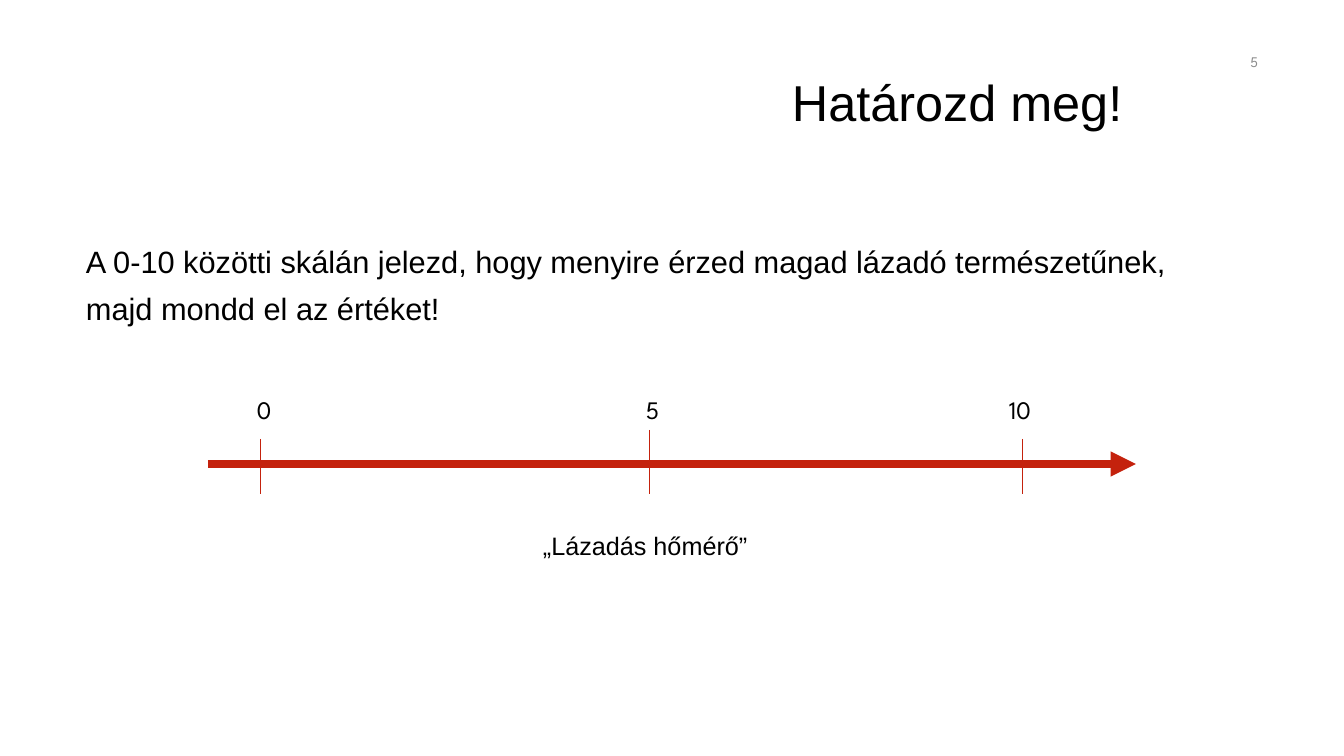
from dataclasses import dataclass

from lxml.etree import SubElement
from pptx import Presentation
from pptx.dml.color import RGBColor
from pptx.enum.shapes import MSO_CONNECTOR
from pptx.enum.text import MSO_ANCHOR, MSO_AUTO_SIZE, PP_ALIGN
from pptx.oxml.ns import qn
from pptx.util import Pt

# Content
TITLE = "Határozd meg!"
INSTRUCTIONS = [
    "A 0-10 közötti skálán jelezd, hogy menyire érzed magad lázadó természetűnek,",
    "majd mondd el az értéket!",
]
PAGE_NUMBER = "5"
CAPTION = "„Lázadás hőmérő”"
# Label, tick x, tick top, label width
TICKS = [("0", 261, 439, 29), ("5", 650, 430, 29), ("10", 1023, 439, 48)]


@dataclass(frozen=True)
class Theme:
    text: str = "000000"
    muted: str = "8C8C8C"
    accent: str = "C4220D"
    body_font: str = "Arial"
    number_font: str = "League Spartan"
    title_size: float = 36
    body_size: float = 22
    label_size: float = 18
    page_size: float = 10.5
    axis_width: float = 6
    tick_width: float = 0.75


THEME = Theme()
SLIDE_WIDTH, SLIDE_HEIGHT = 1344, 756
AXIS_LEFT, AXIS_RIGHT, AXIS_Y = 208, 1136, 464
TICK_BOTTOM = 494
LABEL_TOP, LABEL_HEIGHT = 389, 40


def px(length):
    return round(length * 914400 / 100.8)


def add_text(slide, lines, left, top, width, height, *, size, font=THEME.body_font,
             color=THEME.text, align=None, anchor=MSO_ANCHOR.TOP, wrap=True,
             grow=False, line_spacing=None, gap=None):
    box = slide.shapes.add_textbox(px(left), px(top), px(width), px(height))
    frame = box.text_frame
    frame.text = "\n".join(lines)
    frame.word_wrap = wrap
    frame.vertical_anchor = anchor
    frame.auto_size = MSO_AUTO_SIZE.SHAPE_TO_FIT_TEXT if grow else MSO_AUTO_SIZE.NONE
    for index, paragraph in enumerate(frame.paragraphs):
        paragraph.alignment = align
        paragraph.line_spacing = line_spacing
        if index and gap:
            paragraph.space_before = Pt(gap)
        paragraph.font.name = font
        paragraph.font.size = Pt(size)
        paragraph.font.color.rgb = RGBColor.from_string(color)


def add_line(slide, start, end, width, arrow=False):
    line = slide.shapes.add_connector(
        MSO_CONNECTOR.STRAIGHT, *map(px, start), *map(px, end))
    line.line.color.rgb = RGBColor.from_string(THEME.accent)
    line.line.width = Pt(width)
    properties = line.element.spPr
    if arrow:
        SubElement(properties.find(qn("a:ln")), qn("a:tailEnd"), type="triangle")
    SubElement(properties, qn("a:effectLst"))


def main():
    presentation = Presentation()
    presentation.slide_width = px(SLIDE_WIDTH)
    presentation.slide_height = px(SLIDE_HEIGHT)
    slide = presentation.slides.add_slide(presentation.slide_layouts[6])

    # Heading, page number and instructions
    add_text(slide, [TITLE], 782, 66, 368, 72, size=THEME.title_size,
             wrap=False, grow=True)
    add_text(slide, [PAGE_NUMBER], 966, 42, 302, 40, size=THEME.page_size,
             font=THEME.number_font, color=THEME.muted, align=PP_ALIGN.RIGHT,
             anchor=MSO_ANCHOR.MIDDLE)
    add_text(slide, INSTRUCTIONS, 76, 242, 1192, 107, size=THEME.body_size,
             line_spacing=0.9, gap=10)

    # Scale: arrow, ticks and labels centred over the ticks
    add_line(slide, (AXIS_LEFT, AXIS_Y), (AXIS_RIGHT, AXIS_Y),
             THEME.axis_width, arrow=True)
    for label, x, top, width in TICKS:
        add_line(slide, (x, top), (x, TICK_BOTTOM), THEME.tick_width)
        add_text(slide, [label], x - width // 2, LABEL_TOP, width, LABEL_HEIGHT,
                 size=THEME.label_size, font=THEME.number_font, grow=True)

    # Caption
    add_text(slide, [CAPTION], 533, 525, 234, 40, size=THEME.label_size,
             wrap=False, grow=True)

    presentation.save("out.pptx")


if __name__ == "__main__":
    main()
